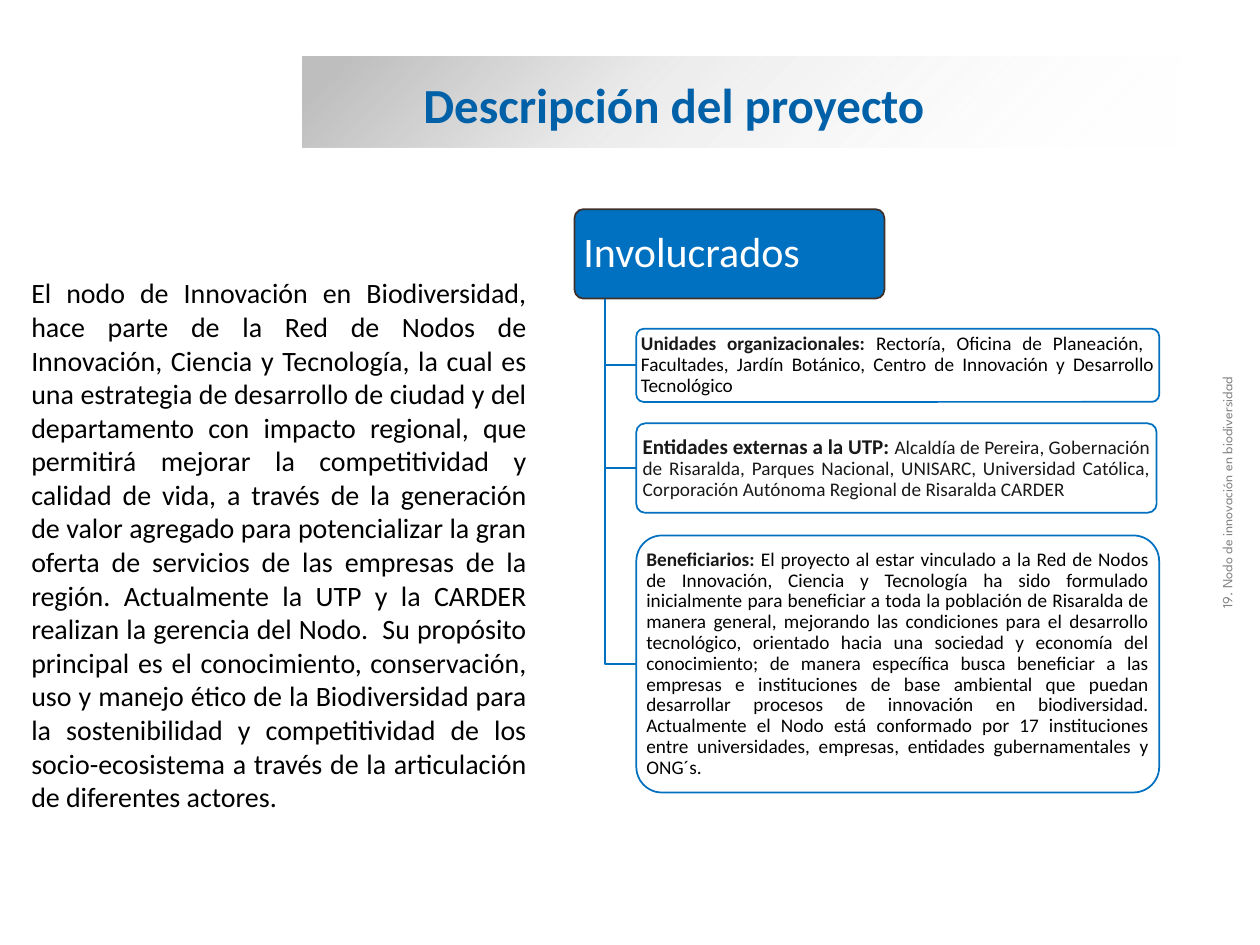
import pptx
import pptx.dml.color
import pptx.enum.shapes
import pptx.enum.text
import pptx.oxml
import pptx.oxml.ns
import pptx.util
from dataclasses import dataclass
from lxml import etree

Inches = pptx.util.Inches
Align = pptx.enum.text.PP_ALIGN
Anchor = pptx.enum.text.MSO_ANCHOR
AutoSize = pptx.enum.text.MSO_AUTO_SIZE
AutoShape = pptx.enum.shapes.MSO_SHAPE


@dataclass(frozen=True)
class Theme:
    font: str = "Calibri"
    side_font: str = "League Spartan"
    title: str = "0060A8"
    accent: str = "0070C0"
    head_line: str = "3F3029"
    white: str = "FFFFFF"
    black: str = "000000"
    dark: str = "191919"
    grey: str = "808080"
    band: str = "BFBFBF"
    title_size: int = 28
    head_size: int = 24
    body_size: int = 16
    large_label_size: int = 12
    detail_size: int = 11
    side_size: int = 8


class SlideBuilder:
    def __init__(self, slide, theme):
        self.slide = slide
        self.theme = theme

    def color(self, value):
        return pptx.dml.color.RGBColor.from_string(value)

    def set_text(self, shape, runs, align=Align.LEFT, anchor=Anchor.TOP, margins=None,
                 spacing=None, font=None, auto_size=AutoSize.NONE):
        """Fill one paragraph with (text, size, colour, bold) runs."""
        frame = shape.text_frame
        frame.word_wrap = True
        frame.auto_size = auto_size
        frame.vertical_anchor = anchor
        if margins:
            frame.margin_left = frame.margin_right = Inches(margins[0])
            frame.margin_top = frame.margin_bottom = Inches(margins[1])
        paragraph = frame.paragraphs[0]
        paragraph.alignment = align
        if spacing:
            paragraph.line_spacing = spacing
        for text, size, color, bold in runs:
            run = paragraph.add_run()
            run.text = text
            run.font.name = font or self.theme.font
            run.font.size = pptx.util.Pt(size)
            run.font.bold = bold
            run.font.color.rgb = self.color(color)

    def gradient_band(self, left, top, width, height, stops, angle):
        shape = self.slide.shapes.add_shape(
            AutoShape.RECTANGLE, *map(Inches, (left, top, width, height)))
        shape.shadow.inherit = False
        shape.line.fill.background()
        stop_xml = "".join(
            f'<a:gs pos="{position * 1000}"><a:srgbClr val="{color}">'
            f'<a:alpha val="{alpha * 1000}"/></a:srgbClr></a:gs>'
            for position, color, alpha in stops)
        gradient = pptx.oxml.parse_xml(
            f'<a:gradFill {pptx.oxml.ns.nsdecls("a")} rotWithShape="1">'
            f'<a:gsLst>{stop_xml}</a:gsLst>'
            f'<a:lin ang="{angle * 60000}" scaled="0"/></a:gradFill>')
        shape._element.spPr.find(pptx.oxml.ns.qn("a:prstGeom")).addnext(gradient)

    def title(self, left, top, width, height, text):
        shape = self.slide.shapes.title
        shape.left, shape.top, shape.width, shape.height = map(
            Inches, (left, top, width, height))
        # Bring the title in front of its band
        self.slide.shapes._spTree.append(shape._element)
        self.set_text(shape, [(text, self.theme.title_size, self.theme.title, True)],
                      anchor=Anchor.MIDDLE)

    def text(self, left, top, width, height, runs, rotation=0, **style):
        shape = self.slide.shapes.add_textbox(*map(Inches, (left, top, width, height)))
        shape.rotation = rotation
        self.set_text(shape, runs, auto_size=AutoSize.SHAPE_TO_FIT_TEXT, **style)

    def card(self, left, top, width, height, runs, fill, line, alpha=100, **style):
        shape = self.slide.shapes.add_shape(
            AutoShape.ROUNDED_RECTANGLE, *map(Inches, (left, top, width, height)))
        shape.adjustments[0] = 0.1
        shape.shadow.inherit = False
        shape.fill.solid()
        shape.fill.fore_color.rgb = self.color(fill)
        if alpha < 100:
            fill_color = shape._element.spPr.find(".//" + pptx.oxml.ns.qn("a:srgbClr"))
            etree.SubElement(fill_color, pptx.oxml.ns.qn("a:alpha"), val=str(alpha * 1000))
        shape.line.color.rgb = self.color(line)
        shape.line.width = pptx.util.Pt(1)
        self.set_text(shape, runs, anchor=Anchor.MIDDLE, spacing=0.9, **style)

    def branch(self, left, top, right, bottom):
        """Draw a line down and then right."""
        builder = self.slide.shapes.build_freeform(Inches(left), Inches(top))
        builder.add_line_segments(
            [(Inches(left), Inches(bottom)), (Inches(right), Inches(bottom))], close=False)
        shape = builder.convert_to_shape()
        shape.shadow.inherit = False
        shape.fill.background()
        shape.line.color.rgb = self.color(self.theme.accent)
        shape.line.width = pptx.util.Pt(1)


BODY = (
    "El nodo de Innovación en Biodiversidad, hace parte de la Red de Nodos de Innovación, "
    "Ciencia y Tecnología, la cual es una estrategia de desarrollo de ciudad y del departamento "
    "con impacto regional, que permitirá mejorar la competitividad y calidad de vida, a través "
    "de la generación de valor agregado para potencializar la gran oferta de servicios de las "
    "empresas de la región. Actualmente la UTP y la CARDER realizan la gerencia del Nodo.  Su "
    "propósito principal es el conocimiento, conservación, uso y manejo ético de la "
    "Biodiversidad para la sostenibilidad y competitividad de los socio-ecosistema a través de "
    "la articulación de diferentes actores.")
UNITS = (
    "Rectoría, Oficina de Planeación,  Facultades, Jardín Botánico, Centro de Innovación y "
    "Desarrollo Tecnológico")
PARTNERS = (
    "Alcaldía de Pereira, Gobernación de Risaralda, Parques Nacional, UNISARC, Universidad "
    "Católica, Corporación Autónoma Regional de Risaralda CARDER")
BENEFICIARIES = (
    "El proyecto al estar vinculado a la Red de Nodos de Innovación, Ciencia y Tecnología ha "
    "sido formulado inicialmente para beneficiar a toda la población de Risaralda de manera "
    "general, mejorando las condiciones para el desarrollo tecnológico, orientado hacia una "
    "sociedad y economía del conocimiento; de manera específica busca beneficiar a las empresas "
    "e instituciones de base ambiental que puedan desarrollar procesos de innovación en "
    "biodiversidad. Actualmente el Nodo está conformado por 17 instituciones entre "
    "universidades, empresas, entidades gubernamentales y ONG´s.")


def main():
    presentation = pptx.Presentation()
    presentation.slide_width = Inches(10)
    presentation.slide_height = Inches(7.5)
    theme = Theme()
    slide = presentation.slides.add_slide(presentation.slide_layouts[5])
    builder = SlideBuilder(slide, theme)

    # Title on its fading band
    builder.gradient_band(2.4, 0.45, 6.98, 0.72, [
        (5, theme.band, 100), (37, theme.band, 31), (100, theme.white, 0)], angle=45)
    builder.title(3.26, 0.54, 6.2, 0.57, "Descripción del proyecto")

    # Head of the stakeholder tree
    head_left, head_top, head_width, head_height = 4.56, 1.66, 2.46, 0.71
    builder.card(head_left, head_top, head_width, head_height,
                 [("Involucrados", theme.head_size, theme.white, False)],
                 theme.accent, theme.head_line, margins=(0.05, 0.03))

    # Stakeholder cards, each joined to the head at mid height
    trunk, card_left = 4.8, 5.05
    stakeholders = [
        (2.61, 4.15, 0.58, "Unidades organizacionales: ", theme.detail_size,
         UNITS, theme.black, 0.02),
        (3.36, 4.13, 0.71, "Entidades externas a la UTP: ", theme.large_label_size,
         PARTNERS, theme.dark, 0.03),
        (4.25, 4.15, 2.04, "Beneficiarios: ", theme.detail_size,
         BENEFICIARIES, theme.black, 0.02),
    ]
    for top, width, height, label, label_size, detail, detail_color, margin in stakeholders:
        builder.branch(trunk, head_top + head_height, card_left, top + height / 2)
        builder.card(card_left, top, width, height,
                     [(label, label_size, theme.dark, True),
                      (detail, theme.detail_size, detail_color, False)],
                     theme.white, theme.accent, alpha=90,
                     align=Align.JUSTIFY, margins=(margin, 0.02))

    # Project description
    builder.text(0.15, 2.14, 4.13, 4.41, [(BODY, theme.body_size, theme.black, False)],
                 align=Align.JUSTIFY)

    # Project name along the right edge
    builder.text(7.22, 3.79, 5.04, 0.24,
                 [("19. Nodo de innovación en biodiversidad", theme.side_size, theme.grey, False)],
                 rotation=270, align=Align.CENTER, font=theme.side_font)

    presentation.save("out.pptx")


if __name__ == "__main__":
    main()
